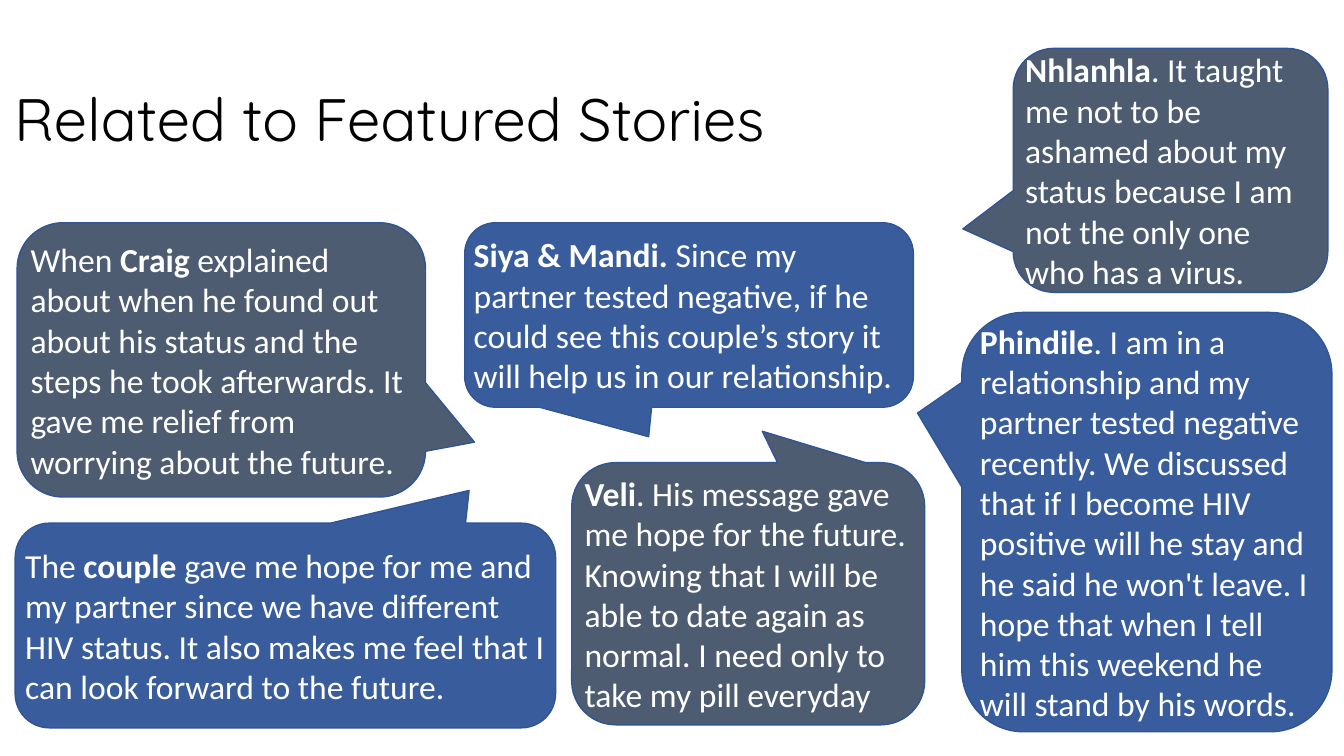
from dataclasses import dataclass

from pptx import Presentation, util as u
from pptx.dml.color import RGBColor
from pptx.enum import shapes, text
from pptx.oxml import ns, xmlchemy


@dataclass(frozen=True)
class Theme:
    slate: str = "44546A"
    blue: str = "2F5597"
    white: str = "FFFFFF"
    black: str = "000000"
    opacity: int = 95
    body_font: str = "Calibri"
    title_font: str = "Quicksand"
    body_size: float = 24
    title_size: float = 42.7


@dataclass(frozen=True)
class Area:
    """Left, top, width and height in percent of the slide."""
    left: float
    top: float
    width: float
    height: float


@dataclass(frozen=True)
class Callout:
    area: Area
    tip: tuple[float, float]  # pointer offset from the centre, in shares of the shape
    fill: str
    runs: tuple[tuple[str, bool], ...]  # wording, bold


THEME = Theme()
W, H = u.Inches(13.33), u.Inches(7.5)

TITLE_AREA = Area(0.3, 7.87, 85, 16.67)
CALLOUTS = [
    Callout(Area(75.39, 6.4, 23.41, 32.27), (-0.66, 0.24), THEME.slate, (
        ("Nhlanhla", True),
        (". It taught me not to be ashamed about my status because I am not "
         "the only one who has a virus.", False))),
    Callout(Area(34.58, 29.47, 33.38, 24.4), (-0.09, 0.66), THEME.blue, (
        ("Siya & Mandi. ", True),
        ("Since my partner tested negative, if he could see this couple’s "
         "story it will help us in our relationship.", False))),
    Callout(Area(71.57, 41.33, 27.53, 55.47), (-0.62, -0.26), THEME.blue, (
        ("Phindile", True),
        (". I am in a relationship and my partner tested negative recently. "
         "We discussed that if I become HIV positive will he stay and he said "
         "he won't leave. I hope that when I tell him this weekend he will "
         "stand by his words.", False))),
    Callout(Area(1.13, 69.2, 40.21, 27.07), (0.34, -0.66), THEME.blue, (
        ("The ", False), ("couple", True),
        (" gave me hope for me and my partner since we have different HIV "
         "status. It also makes me feel that I can look forward to the "
         "future.", False))),
    Callout(Area(1.28, 29.47, 30.38, 36.27), (0.62, 0.3), THEME.slate, (
        ("When ", False), ("Craig", True),
        (" explained about when he found out about his status and the steps "
         "he took afterwards. It gave me relief from worrying about the "
         "future.", False))),
    Callout(Area(42.54, 61.2, 26.26, 34.67), (0.04, -0.62), THEME.slate, (
        ("Veli", True),
        (". His message gave me hope for the future. Knowing that I will be "
         "able to date again as normal. I need only to take my pill everyday",
         False))),
]


def set_all(target, values: dict) -> None:
    for name, value in values.items():
        setattr(target, name, value)


def place(area: Area) -> dict[str, int]:
    return {"left": int(W * area.left / 100), "top": int(H * area.top / 100),
            "width": int(W * area.width / 100), "height": int(H * area.height / 100)}


def add_run(p, wording: str, font: str, size: float, color: str, bold: bool = False) -> None:
    r = p.add_run()
    r.text = wording
    set_all(r.font, {"name": font, "size": u.Pt(size), "bold": bold})
    r.font.color.rgb = RGBColor.from_string(color)


def fill_translucent(sp, color: str) -> None:
    sp.fill.solid()
    sp.fill.fore_color.rgb = RGBColor.from_string(color)
    clr = sp._element.spPr.find(ns.qn("a:solidFill")).find(ns.qn("a:srgbClr"))
    alpha = xmlchemy.OxmlElement("a:alpha")
    alpha.set("val", str(THEME.opacity * 1000))
    clr.append(alpha)


def add_title(s, wording: str) -> None:
    sp = s.shapes.title
    set_all(sp, place(TITLE_AREA))
    tf = sp.text_frame
    set_all(tf, {"vertical_anchor": text.MSO_ANCHOR.MIDDLE, "word_wrap": True,
                 "auto_size": text.MSO_AUTO_SIZE.NONE})
    p = tf.paragraphs[0]
    set_all(p, {"alignment": text.PP_ALIGN.LEFT, "line_spacing": 0.9})
    add_run(p, wording, THEME.title_font, THEME.title_size, THEME.black)


def add_callout(s, callout: Callout) -> None:
    sp = s.shapes.add_shape(shapes.MSO_SHAPE.ROUNDED_RECTANGULAR_CALLOUT,
                            **place(callout.area))
    sp.adjustments[0], sp.adjustments[1] = callout.tip
    sp.shadow.inherit = False
    fill_translucent(sp, callout.fill)
    sp.line.color.rgb = RGBColor.from_string(THEME.blue)
    sp.line.width = u.Pt(1)

    tf = sp.text_frame
    set_all(tf, {"margin_left": 0, "margin_right": 0, "word_wrap": True,
                 "vertical_anchor": text.MSO_ANCHOR.MIDDLE})
    p = tf.paragraphs[0]
    p.alignment = text.PP_ALIGN.LEFT
    for wording, bold in callout.runs:
        add_run(p, wording, THEME.body_font, THEME.body_size, THEME.white, bold)


def main() -> None:
    prs = Presentation()
    set_all(prs, {"slide_width": W, "slide_height": H})
    s = prs.slides.add_slide(prs.slide_layouts[5])

    # Heading
    add_title(s, "Related to Featured Stories")

    # Speech bubbles
    for callout in CALLOUTS:
        add_callout(s, callout)

    prs.save("out.pptx")


if __name__ == "__main__":
    main()
